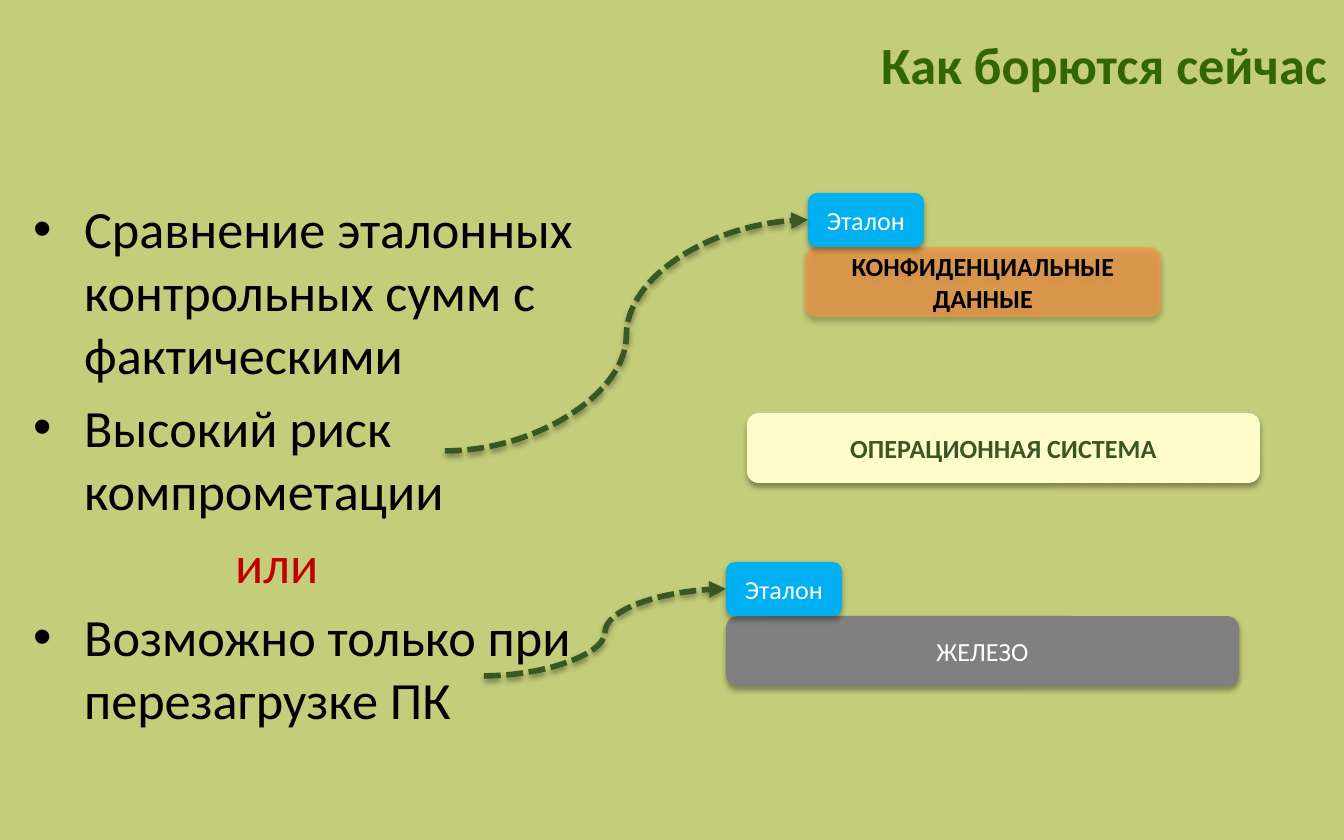
from dataclasses import dataclass

from lxml import etree
from pptx import Presentation
from pptx import util as u
from pptx.dml.color import RGBColor
from pptx.enum import dml, shapes, text
from pptx.oxml.ns import qn


@dataclass(frozen=True)
class Theme:
    """Colours, font and type sizes of the slide."""
    font: str = "Calibri"
    back: str = "C4CD7A"
    title: str = "336600"
    ink: str = "000000"
    accent: str = "C00000"
    dark: str = "385723"
    light: str = "FFFFFF"
    hardware: str = "808080"
    system: str = "FFFCCC"
    data: str = "F79646"
    etalon: str = "00B0F0"
    large: int = 28
    small: int = 14


THEME = Theme()
INCH_PX = 134.4


def px(n):
    """Turn px into EMU."""
    return u.Emu(round(n * u.Inches(1) / INCH_PX))


def sub(parent, tag, **attrs):
    """Append a DrawingML element with the given attributes."""
    el = etree.SubElement(parent, qn(tag))
    for name, value in attrs.items():
        el.set(name, str(value))
    return el


def style(p, size, color, bold=False):
    """Set the font of a whole paragraph."""
    p.font.name, p.font.size, p.font.bold = THEME.font, u.Pt(size), bold
    p.font.color.rgb = RGBColor.from_string(color)


def add_shadow(sp_pr, alpha, dist):
    """Give a shape or connector a soft shadow straight below."""
    effects = sp_pr.find(qn("a:effectLst"))
    if effects is None:
        effects = sub(sp_pr, "a:effectLst")
    shadow = sub(effects, "a:outerShdw", blurRad=u.Pt(3.1), dist=u.Pt(dist),
                 dir=90 * 60000, algn="ctr", rotWithShape=0)
    color = sub(shadow, "a:srgbClr", val=THEME.ink)
    sub(color, "a:alpha", val=alpha * 1000)


def add_title(s, box, words):
    """Place the right-aligned title."""
    sp = s.shapes.title
    sp.left, sp.top, sp.width, sp.height = map(px, box)
    tf = sp.text_frame
    tf.vertical_anchor = text.MSO_ANCHOR.MIDDLE
    p = tf.paragraphs[0]
    p.text, p.alignment = words, text.PP_ALIGN.RIGHT
    style(p, THEME.large, THEME.title, True)


def add_points(s, box, points):
    """Place the list; each point is its words and whether it has a bullet."""
    tf = s.shapes.add_textbox(*map(px, box)).text_frame
    tf.word_wrap = True
    for i, (words, bulleted) in enumerate(points):
        p = tf.paragraphs[0] if i == 0 else tf.add_paragraph()
        p.text = words
        if i:
            p.space_before = u.Pt(THEME.large / 5)
        p_pr = p._p.get_or_add_pPr()
        p_pr.set("marL", str(px(51 if bulleted else 202)))
        p_pr.set("indent", str(px(-51 if bulleted else 0)))
        if bulleted:
            sub(p_pr, "a:buFont", typeface="Arial")
            sub(p_pr, "a:buChar", char="•")
        style(p, THEME.large, THEME.ink if bulleted else THEME.accent)


def add_block(s, box, words, fill, color, bold=False, opacity=100):
    """Place one labelled rounded block."""
    sp = s.shapes.add_shape(shapes.MSO_SHAPE.ROUNDED_RECTANGLE, *map(px, box))
    sp.fill.solid()
    sp.fill.fore_color.rgb = RGBColor.from_string(fill)
    sp.line.fill.background()
    sp.shadow.inherit = False
    sp_pr = sp._element.spPr
    if opacity < 100:
        sub(sp_pr.find(qn("a:solidFill"))[0], "a:alpha", val=opacity * 1000)
    add_shadow(sp_pr, 35, 1.8)
    tf = sp.text_frame
    tf.word_wrap = True
    tf.vertical_anchor = text.MSO_ANCHOR.MIDDLE
    p = tf.paragraphs[0]
    p.text, p.alignment = words, text.PP_ALIGN.CENTER
    style(p, THEME.small, color, bold)


def add_layers(s, box):
    """Place the three system layers and the reference tags on two of them."""
    x, y, w, h = box
    layer_h, tag_w, tag_h = 70, 116, 54
    layer_w = w - 21
    base = y + h - layer_h
    add_block(s, (x, base, layer_w, layer_h), "ЖЕЛЕЗО",
              THEME.hardware, THEME.light)
    add_block(s, (x + 21, y + 220, layer_w, layer_h), "ОПЕРАЦИОННАЯ СИСТЕМА",
              THEME.system, THEME.dark, True)
    add_block(s, (x + 79, y + tag_h, 356, layer_h), "КОНФИДЕНЦИАЛЬНЫЕ ДАННЫЕ",
              THEME.data, THEME.ink, True, 70)
    for left, top in ((x, base - tag_h), (x + 82, y)):
        add_block(s, (left, top, tag_w, tag_h), "Эталон",
                  THEME.etalon, THEME.light)


def add_arrow(s, box):
    """Draw a dashed curved arrow from bottom left to top right of the box."""
    x, y, w, h = box
    sp = s.shapes.add_connector(shapes.MSO_CONNECTOR.CURVE,
                                *map(px, (x, y + h, x + w, y)))
    sp.line.color.rgb = RGBColor.from_string(THEME.dark)
    sp.line.width = u.Pt(3)
    sp.line.dash_style = dml.MSO_LINE.SQUARE_DOT
    sp_pr = sp._element.spPr
    sub(sp_pr.find(qn("a:ln")), "a:tailEnd", type="triangle")
    add_shadow(sp_pr, 38, 1.6)


def main():
    """Build and save the slide."""
    prs = Presentation()
    prs.slide_width, prs.slide_height = px(1344), px(840)
    s = prs.slides.add_slide(prs.slide_layouts[5])
    s.background.fill.solid()
    s.background.fill.fore_color.rgb = RGBColor.from_string(THEME.back)
    add_title(s, (453, 12, 887, 104), "Как борются сейчас")
    add_points(s, (20, 190, 648, 566), (
        ("Сравнение эталонных контрольных сумм с фактическими", True),
        ("Высокий риск компрометации", True),
        ("или", False),
        ("Возможно только при перезагрузке ПК", True),
    ))
    add_layers(s, (726, 193, 534, 493))
    for box in ((445, 220, 363, 231), (484, 589, 242, 87)):
        add_arrow(s, box)
    prs.save("out.pptx")


if __name__ == "__main__":
    main()
